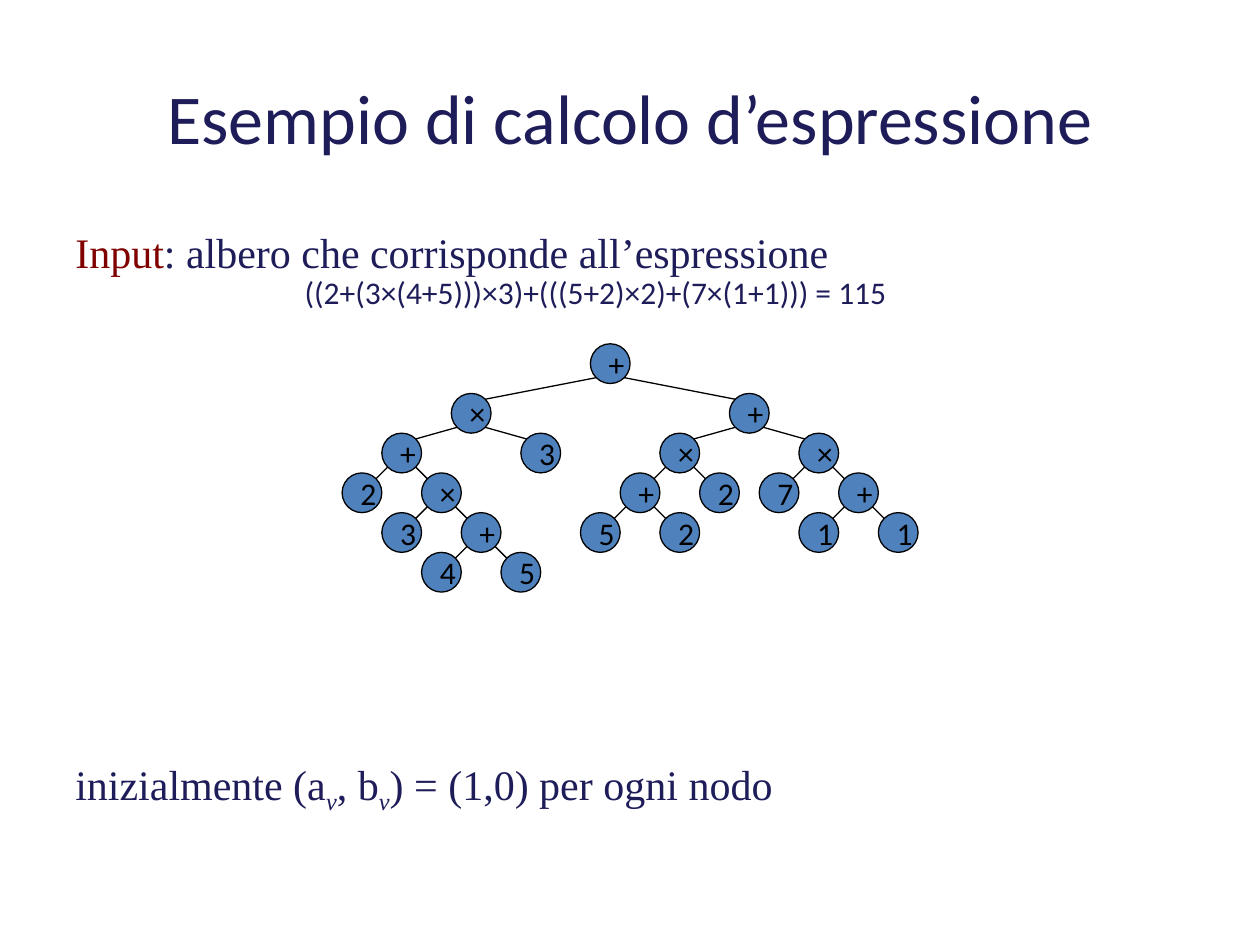
from lxml import etree
from pptx import Presentation
from pptx.dml.color import RGBColor
from pptx.enum import shapes, text
from pptx.oxml import ns
from pptx.util import Pt

NAVY, RED, BLUE, BLACK = "1E1D5A", "800000", "4F81BD", "000000"
TITLE = "Esempio di calcolo d’espressione"
FORMULA = "((2+(3×(4+5)))×3)+(((5+2)×2)+(7×(1+1))) = 115"
# Each paragraph: space before, then (words, colour, is subscript)
BODY = [
    (4.8, [("Input", RED, False),
           (": albero che corrisponde all’espressione", NAVY, False)]),
    (275, [("inizialmente (a", NAVY, False), ("v", NAVY, True),
           (", b", NAVY, False), ("v", NAVY, True),
           (") = (1,0) per ogni nodo", NAVY, False)]),
]
# A branch is (operator, left, right); a leaf is a digit
TREE = ("+",
        ("×", ("+", "2", ("×", "3", ("+", "4", "5"))), "3"),
        ("+",
         ("×", ("+", "5", "2"), "2"),
         ("×", "7", ("+", "1", "1"))))

NODE = 22.7                                # diameter and grid step
ROOT = (348.7, 207.8)                      # centre of the root
SPREADS = [3.5, 1.75]                      # sideways steps, then 1
DROPS = [1.25]                             # downward steps, then 1
REACH = NODE / 2 * 0.707                   # edges meet circles at 45 degrees


def colour(value):
    """Turn a hex string into a colour."""
    return RGBColor.from_string(value)


def style(font, name, size, value):
    """Set the face, size and colour of a font."""
    font.name, font.size = name, Pt(size)
    font.color.rgb = colour(value)


def add_text(left, top, width, height, wrap=True):
    """Add an empty text box and return its frame."""
    box = page.shapes.add_textbox(Pt(left), Pt(top), Pt(width), Pt(height))
    box.text_frame.word_wrap = wrap
    return box.text_frame


def add_edge(group, start, end):
    """Draw a black line between two points."""
    edge = group.shapes.add_connector(
        shapes.MSO_CONNECTOR.STRAIGHT, *(Pt(value) for value in start + end))
    edge.line.color.rgb = colour(BLACK)
    edge.line.width = Pt(0.75)
    etree.SubElement(edge._element.spPr, ns.qn("a:effectLst"))


def add_node(group, label, x, y):
    """Draw a labelled circle around a centre."""
    node = group.shapes.add_shape(
        shapes.MSO_SHAPE.OVAL, Pt(x - NODE / 2), Pt(y - NODE / 2), Pt(NODE), Pt(NODE))
    node.shadow.inherit = False
    node.fill.solid()
    node.fill.fore_color.rgb = colour(BLUE)
    node.line.color.rgb = colour(BLACK)
    node.line.width = Pt(0.75)
    frame = node.text_frame
    frame.word_wrap = False
    frame.vertical_anchor = text.MSO_ANCHOR.MIDDLE
    para = frame.paragraphs[0]
    para.text, para.alignment = label, text.PP_ALIGN.LEFT
    style(para.font, "Calibri", 18, BLACK)


def step(steps, depth):
    """Give the distance to the next level, in points."""
    return NODE * (steps[depth] if depth < len(steps) else 1)


def add_tree(group, tree, x, y, depth=0):
    """Draw a tree with its edges, from the root down."""
    label, *children = tree
    for side, child in zip((-1, 1), children):
        child_x = x + side * step(SPREADS, depth)
        child_y = y + step(DROPS, depth)
        add_edge(group, (child_x - side * REACH, child_y - REACH),
                 (x + side * REACH, y + REACH))
        add_tree(group, child, child_x, child_y, depth + 1)
    add_node(group, label, x, y)


deck = Presentation()
deck.slide_width, deck.slide_height = Pt(720), Pt(540)
page = deck.slides.add_slide(deck.slide_layouts[6])

frame = add_text(36, 21.6, 648, 90)
frame.vertical_anchor = text.MSO_ANCHOR.MIDDLE
para = frame.paragraphs[0]
para.text, para.alignment = TITLE, text.PP_ALIGN.CENTER
style(para.font, "Calibri", 40, NAVY)

frame = add_text(36, 126, 648, 356.4)
for index, (space, spans) in enumerate(BODY):
    para = frame.add_paragraph() if index else frame.paragraphs[0]
    para.space_before = Pt(space)
    for words, value, subscript in spans:
        span = para.add_run()
        span.text = words
        style(span.font, "Times New Roman", 24, value)
        if subscript:
            span.font.italic = True
            span._r.get_or_add_rPr().set("baseline", "-25000")

add_tree(page.shapes.add_group_shape(), TREE, *ROOT)

frame = add_text(167, 152.6, 385.2, 28.8, wrap=False)
frame.auto_size = text.MSO_AUTO_SIZE.SHAPE_TO_FIT_TEXT
para = frame.paragraphs[0]
para.text = FORMULA
style(para.font, "Calibri", 18, NAVY)

deck.save("out.pptx")
